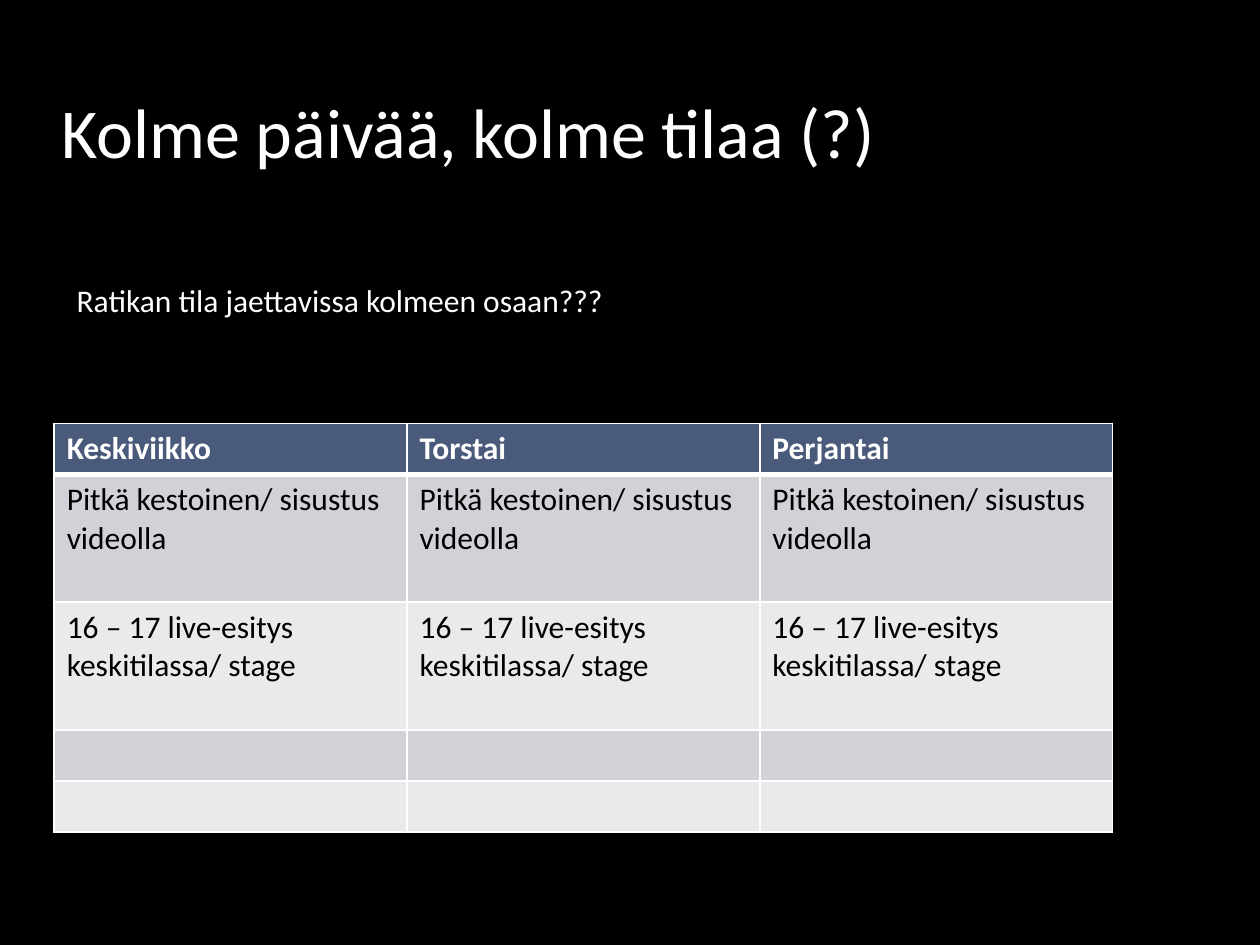
from lxml.etree import SubElement
from pptx import Presentation
from pptx.dml.color import RGBColor
from pptx.enum.text import MSO_ANCHOR
from pptx.oxml.ns import qn
from pptx.util import Inches, Pt

BLACK = RGBColor(0x00, 0x00, 0x00)
WHITE = RGBColor(0xFF, 0xFF, 0xFF)
NAVY = RGBColor(0x4A, 0x5A, 0x7A)
BANDS = (RGBColor(0xD0, 0xD2, 0xD7), RGBColor(0xE9, 0xEA, 0xEC))

DAYS = ("Keskiviikko", "Torstai", "Perjantai")
PROGRAMME = (
    "Pitkä kestoinen/ sisustus videolla",
    "16 – 17 live-esitys keskitilassa/ stage",
    "",
    "",
)
ROW_HEIGHTS = (4.05, 10.15, 10.15, 4.05, 4.05)


class Deck:
    """Holds the style and the current slide, measured on a grid of 100 columns by 75 rows."""

    font = "Calibri"
    body_size = 18
    unit = Inches(0.1)

    def __init__(self):
        self.prs = Presentation()
        self.prs.slide_width, self.prs.slide_height = self.grid(100, 75)
        self.s = self.prs.slides.add_slide(self.prs.slide_layouts[6])
        fill = self.s.background.fill
        fill.solid()
        fill.fore_color.rgb = BLACK

    def grid(self, *counts):
        return [round(n * self.unit) for n in counts]

    def add_text(self, tf, text, size, color, bold=False):
        p = tf.paragraphs[0]
        p.font.size = Pt(size)
        if text:
            r = p.add_run()
            r.text = text
            r.font.name = self.font
            r.font.size = Pt(size)
            r.font.bold = bold
            r.font.color.rgb = color
        return p

    def text_box(self, box, text, size, wrap=True, anchor=MSO_ANCHOR.TOP, before=0):
        tf = self.s.shapes.add_textbox(*self.grid(*box)).text_frame
        tf.word_wrap = wrap
        tf.vertical_anchor = anchor
        self.add_text(tf, text, size, WHITE).space_before = Pt(before)

    def borders(self, cell, **widths):
        tcPr = cell._tc.get_or_add_tcPr()
        for side in "LRTB":
            ln = SubElement(tcPr, qn(f"a:ln{side}"), w=str(Pt(widths.get(side, 1))))
            SubElement(SubElement(ln, qn("a:solidFill")), qn("a:srgbClr"), val=str(WHITE))

    def table(self, left, top, width, heights, rows):
        box = self.grid(left, top, width, sum(heights))
        table = self.s.shapes.add_table(len(rows), len(rows[0]), *box).table
        for row, height in zip(table.rows, self.grid(*heights)):
            row.height = height
        for i, row in enumerate(rows):
            head = i == 0
            for j, text in enumerate(row):
                cell = table.cell(i, j)
                self.borders(cell, T=3 if i == 1 else 1, B=3 if head else 1)
                cell.fill.solid()
                cell.fill.fore_color.rgb = NAVY if head else BANDS[(i - 1) % 2]
                self.add_text(cell.text_frame, text, self.body_size, WHITE if head else BLACK, head)


def main():
    deck = Deck()
    deck.text_box((3.9, 2.5, 84, 11.7), "Kolme päivää, kolme tilaa (?)", 40,
                  anchor=MSO_ANCHOR.BOTTOM, before=4)
    rows = [DAYS] + [(text,) * len(DAYS) for text in PROGRAMME]
    deck.table(4.3, 33.6, 84, ROW_HEIGHTS, rows)
    deck.text_box((5.1, 21.8, 44.9, 4), "Ratikan tila jaettavissa kolmeen osaan???",
                  deck.body_size, wrap=False)
    deck.prs.save("out.pptx")


if __name__ == "__main__":
    main()
